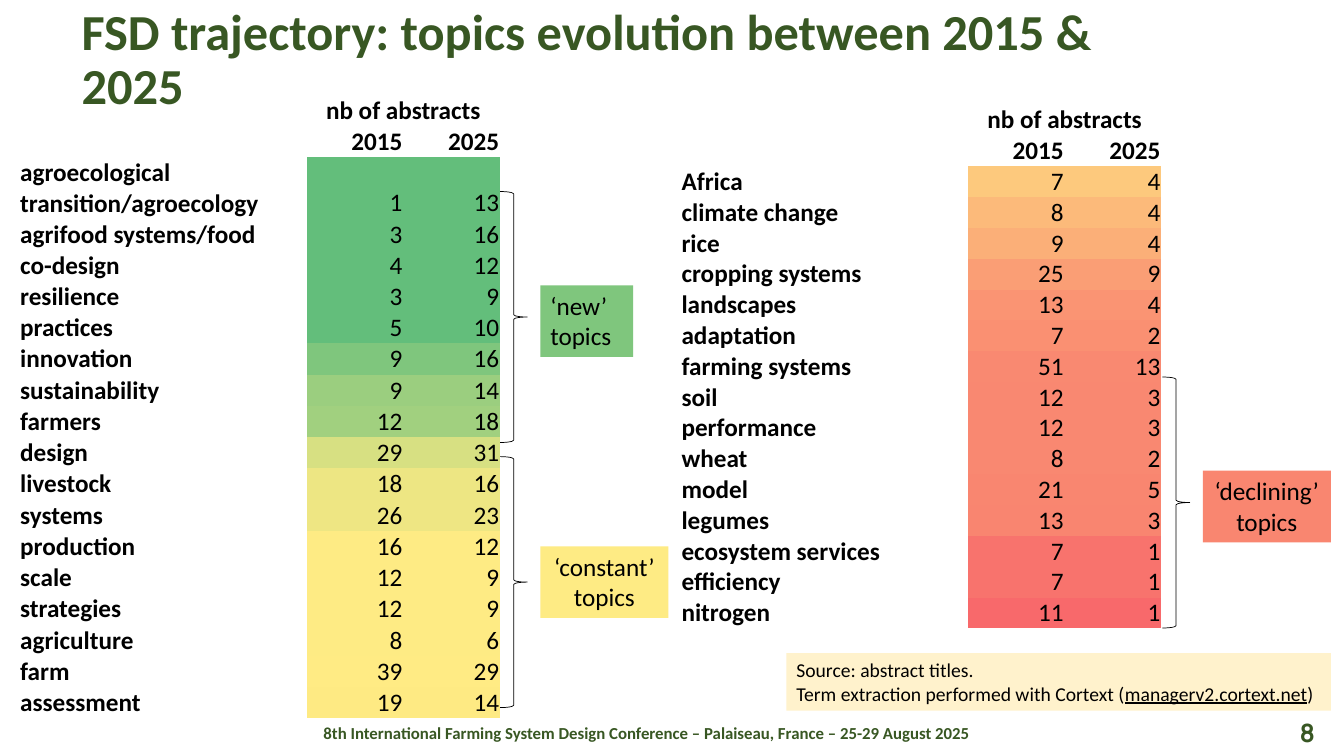
"""Build the slide on the evolution of FSD topics between 2015 and 2025."""
from dataclasses import dataclass

import pptx
import pptx.dml.color
import pptx.enum.shapes
import pptx.enum.text
import pptx.util

Inches = pptx.util.Inches
Pt = pptx.util.Pt
RGBColor = pptx.dml.color.RGBColor
Align = pptx.enum.text.PP_ALIGN
Anchor = pptx.enum.text.MSO_ANCHOR
Shape = pptx.enum.shapes.MSO_SHAPE

BLACK = RGBColor(0x00, 0x00, 0x00)
DARK_GREEN = RGBColor(0x38, 0x57, 0x23)
CREAM = RGBColor(0xFF, 0xF2, 0xCC)
NEW_GREEN = RGBColor(0x63, 0xBE, 0x7B)
LABEL_GREEN = RGBColor(0x7F, 0xC6, 0x7D)
LIGHT_GREEN = RGBColor(0x9B, 0xCE, 0x7F)
PALE_GREEN = RGBColor(0xA1, 0xD0, 0x7F)
LIME = RGBColor(0xD7, 0xE0, 0x82)
LIME_YELLOW = RGBColor(0xED, 0xE6, 0x83)
SOFT_YELLOW = RGBColor(0xEE, 0xE6, 0x83)
YELLOW = RGBColor(0xFE, 0xEB, 0x84)
FARM_YELLOW = RGBColor(0xFF, 0xEB, 0x84)
WARM_YELLOW = RGBColor(0xFE, 0xEA, 0x83)
AMBER = RGBColor(0xFD, 0xC9, 0x7D)
LIGHT_ORANGE = RGBColor(0xFC, 0xBA, 0x7A)
ORANGE = RGBColor(0xFB, 0xAF, 0x78)
DEEP_ORANGE = RGBColor(0xFA, 0x9E, 0x75)
SALMON = RGBColor(0xFA, 0x94, 0x73)
DEEP_SALMON = RGBColor(0xFA, 0x90, 0x72)
LIGHT_CORAL = RGBColor(0xF9, 0x89, 0x71)
CORAL = RGBColor(0xF9, 0x88, 0x71)
LABEL_CORAL = RGBColor(0xF9, 0x86, 0x70)
DEEP_CORAL = RGBColor(0xF9, 0x85, 0x70)
LIGHT_RED = RGBColor(0xF8, 0x73, 0x6D)
RED = RGBColor(0xF8, 0x69, 0x6B)

NO_TABLE_STYLE = "{2D5ABB26-0587-4C30-8999-92F81FD0307C}"


@dataclass(frozen=True)
class Topic:
    name: str
    in_2015: int
    in_2025: int
    fill: RGBColor


@dataclass(frozen=True)
class TopicTable:
    left: float
    top: float
    row_height: float
    top_margin: float
    topics: tuple[Topic, ...]


@dataclass(frozen=True)
class Run:
    text: str
    size: float = 18
    bold: bool = False
    color: RGBColor = BLACK
    font: str = "Calibri"
    underline: bool = False


@dataclass(frozen=True)
class Box:
    left: float
    top: float
    width: float
    height: float
    paragraphs: tuple[tuple[Run, ...], ...]
    align: Align = Align.LEFT
    fill: RGBColor | None = None


RISING = TopicTable(0.19, 0.94, 0.31, 0.5, (
    Topic("agroecological transition/agroecology", 1, 13, NEW_GREEN),
    Topic("agrifood systems/food", 3, 16, NEW_GREEN),
    Topic("co-design", 4, 12, NEW_GREEN),
    Topic("resilience", 3, 9, NEW_GREEN),
    Topic("practices", 5, 10, NEW_GREEN),
    Topic("innovation", 9, 16, LABEL_GREEN),
    Topic("sustainability", 9, 14, LIGHT_GREEN),
    Topic("farmers", 12, 18, PALE_GREEN),
    Topic("design", 29, 31, LIME),
    Topic("livestock", 18, 16, LIME_YELLOW),
    Topic("systems", 26, 23, SOFT_YELLOW),
    Topic("production", 16, 12, YELLOW),
    Topic("scale", 12, 9, YELLOW),
    Topic("strategies", 12, 9, YELLOW),
    Topic("agriculture", 8, 6, YELLOW),
    Topic("farm", 39, 29, FARM_YELLOW),
    Topic("assessment", 19, 14, WARM_YELLOW),
))
DECLINING = TopicTable(6.75, 1.04, 0.3, 0, (
    Topic("Africa", 7, 4, AMBER),
    Topic("climate change", 8, 4, LIGHT_ORANGE),
    Topic("rice", 9, 4, ORANGE),
    Topic("cropping systems", 25, 9, DEEP_ORANGE),
    Topic("landscapes", 13, 4, SALMON),
    Topic("adaptation", 7, 2, DEEP_SALMON),
    Topic("farming systems", 51, 13, LIGHT_CORAL),
    Topic("soil", 12, 3, CORAL),
    Topic("performance", 12, 3, CORAL),
    Topic("wheat", 8, 2, CORAL),
    Topic("model", 21, 5, LABEL_CORAL),
    Topic("legumes", 13, 3, DEEP_CORAL),
    Topic("ecosystem services", 7, 1, LIGHT_RED),
    Topic("efficiency", 7, 1, LIGHT_RED),
    Topic("nitrogen", 11, 1, RED),
))
BRACES = ((4.96, 1.9), (4.96, 4.53), (11.53, 3.74))
BOXES = (
    Box(10.86, 7.07, 2.28, 0.4,
        ((Run("8", 18, True, DARK_GREEN, "Manrope"),),), Align.RIGHT),
    Box(3.11, 7.12, 6.75, 0.3, ((Run(
        "8th International Farming System Design Conference – Palaiseau, France – 25-29 August 2025",
        12, True, DARK_GREEN),),)),
    Box(7.8, 6.48, 5.4, 0.57, (
        (Run("Source: abstract titles.", 14),),
        (Run("Term extraction performed with Cortext (", 14),
         Run("managerv2.cortext.net", 14, underline=True), Run(")", 14)),
    ), fill=CREAM),
    Box(5.36, 5.42, 1.27, 0.71, ((Run("‘constant’ topics"),),), Align.CENTER, YELLOW),
    Box(5.36, 2.83, 0.92, 0.71, ((Run("‘new’ topics"),),), fill=LABEL_GREEN),
    Box(11.93, 4.67, 1.27, 0.71, ((Run("‘declining’ topics"),),), Align.CENTER, LABEL_CORAL),
)
TITLE = Box(0.81, 0.12, 11.17, 0.97, ((Run(
    "FSD trajectory: topics evolution between 2015 & 2025", 36, True, DARK_GREEN),),))


def add_run(paragraph: pptx.text.text._Paragraph, content: Run) -> None:
    run = paragraph.add_run()
    run.text = content.text
    run.font.size = Pt(content.size)
    run.font.bold = content.bold
    run.font.name = content.font
    run.font.color.rgb = content.color
    if content.underline:
        run.font.underline = True


def add_box(slide: pptx.slide.Slide, box: Box) -> pptx.text.text.TextFrame:
    place = [Inches(n) for n in (box.left, box.top, box.width, box.height)]
    if box.fill is None:
        panel = slide.shapes.add_textbox(*place)
    else:
        panel = slide.shapes.add_shape(Shape.RECTANGLE, *place)
        panel.shadow.inherit = False
        panel.fill.solid()
        panel.fill.fore_color.rgb = box.fill
        panel.line.fill.background()
    frame = panel.text_frame
    frame.word_wrap = True
    frame.vertical_anchor = Anchor.TOP
    for index, runs in enumerate(box.paragraphs):
        paragraph = frame.add_paragraph() if index else frame.paragraphs[0]
        paragraph.alignment = box.align
        for content in runs:
            add_run(paragraph, content)
    return frame


def add_brace(slide: pptx.slide.Slide, left: float, top: float) -> None:
    brace = slide.shapes.add_shape(
        Shape.RIGHT_BRACE, Inches(left), Inches(top), Inches(0.27), Inches(2.49))
    brace.shadow.inherit = False
    brace.fill.background()
    brace.line.color.rgb = BLACK
    brace.line.width = Pt(0.5)


def add_topic_table(slide: pptx.slide.Slide, block: TopicTable) -> None:
    rows = [("", "nb of abstracts", ""), ("", "2015", "2025")]
    rows += [(t.name, str(t.in_2015), str(t.in_2025)) for t in block.topics]
    table = slide.shapes.add_table(
        len(rows), 3, Inches(block.left), Inches(block.top),
        Inches(4.77), Inches(block.row_height * len(rows))).table
    table.first_row = table.horz_banding = False
    table._tbl.tblPr[0].text = NO_TABLE_STYLE
    for column, width in zip(table.columns, (2.85, 0.96, 0.96)):
        column.width = Inches(width)
    table.cell(0, 1).merge(table.cell(0, 2))
    for r, texts in enumerate(rows):
        table.rows[r].height = Inches(block.row_height)
        for c, text in enumerate(texts):
            cell = table.cell(r, c)
            cell.margin_left = cell.margin_right = Inches(0.01)
            cell.margin_top, cell.margin_bottom = Pt(block.top_margin), 0
            cell.vertical_anchor = Anchor.BOTTOM
            paragraph = cell.text_frame.paragraphs[0]
            paragraph.alignment = Align.LEFT if c == 0 else Align.CENTER if r == 0 else Align.RIGHT
            if text:
                add_run(paragraph, Run(text, bold=r < 2 or c == 0))
            else:
                paragraph.font.size = Pt(18)
            if r > 1 and c > 0:
                cell.fill.solid()
                cell.fill.fore_color.rgb = block.topics[r - 2].fill
            else:
                cell.fill.background()


def main() -> None:
    deck = pptx.Presentation()
    deck.slide_width, deck.slide_height = Inches(13.33), Inches(7.5)
    slide = deck.slides.add_slide(deck.slide_layouts[6])
    add_topic_table(slide, DECLINING)
    for left, top in BRACES:
        add_brace(slide, left, top)
    for box in BOXES:
        add_box(slide, box)
    title = add_box(slide, TITLE)
    title.margin_left = 0
    title.vertical_anchor = Anchor.MIDDLE
    title.paragraphs[0].line_spacing = 0.9
    add_topic_table(slide, RISING)
    deck.save("out.pptx")


if __name__ == "__main__":
    main()
